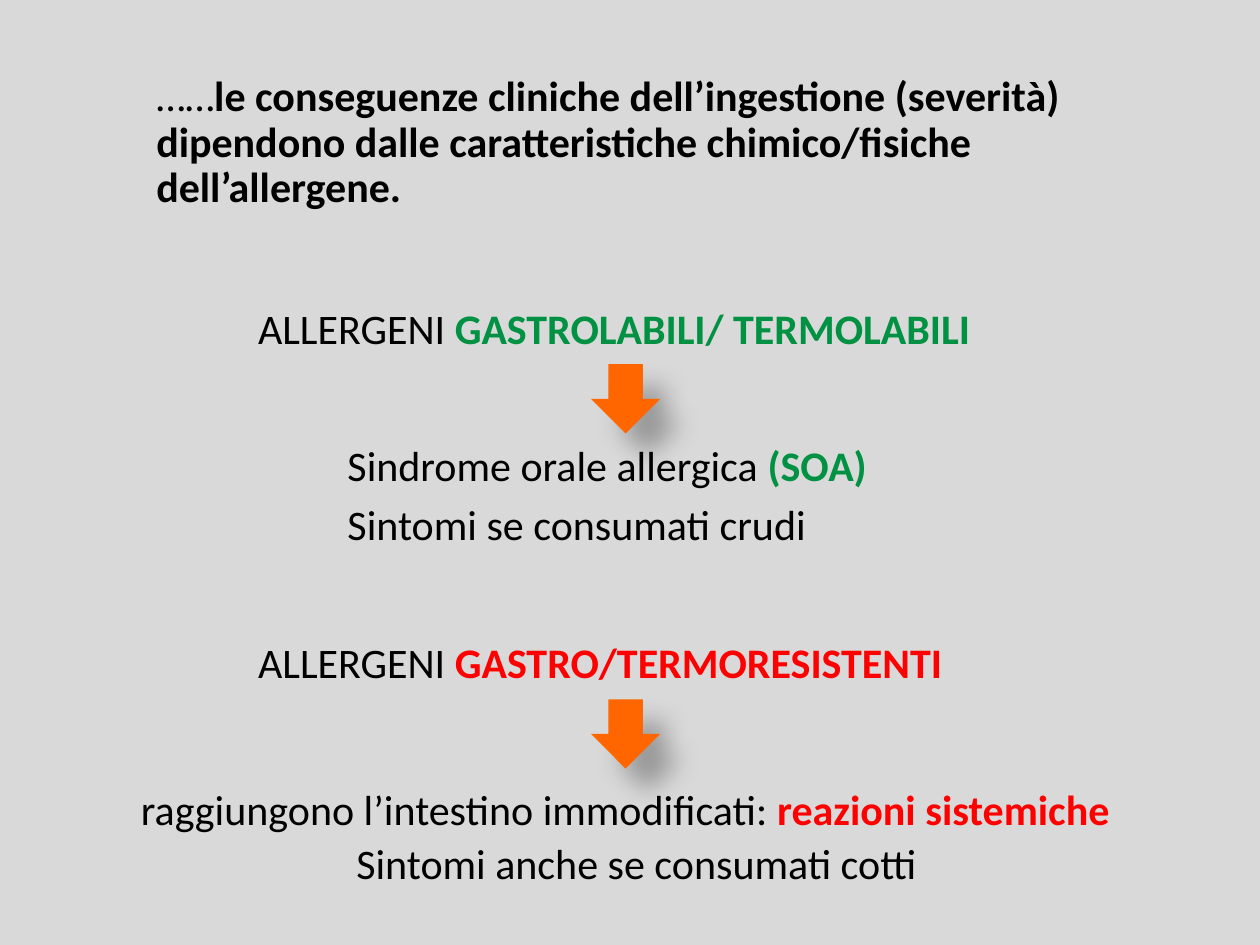
from pptx import Presentation
from pptx import util as u
from pptx.dml.color import RGBColor
from pptx.enum import shapes, text
from pptx.oxml import parse_xml
from pptx.oxml.ns import nsdecls

BLACK = RGBColor(0x00, 0x00, 0x00)
GREEN = RGBColor(0x00, 0x92, 0x42)
RED = RGBColor(0xFF, 0x00, 0x00)
ORANGE = RGBColor(0xFF, 0x66, 0x00)
GREY = RGBColor(0xD9, 0xD9, 0xD9)

SHADOW = (
    f'<a:effectLst {nsdecls("a")}>'
    f'<a:outerShdw blurRad="{u.Pt(15)}" dist="{u.Pt(18)}" dir="2700000" algn="tl" rotWithShape="0">'
    '<a:srgbClr val="000000"><a:alpha val="30000"/></a:srgbClr>'
    '</a:outerShdw></a:effectLst>'
)


class AllergenSlide:
    font = "Calibri"
    size = u.Pt(24)

    def __init__(self, deck):
        self.page = deck.slides.add_slide(deck.slide_layouts[5])
        fill = self.page.background.fill
        fill.solid()
        fill.fore_color.rgb = GREY

    def add_spans(self, box, spans):
        frame = box.text_frame
        frame.word_wrap = True
        frame.auto_size = text.MSO_AUTO_SIZE.NONE
        frame.vertical_anchor = text.MSO_ANCHOR.TOP
        para = frame.paragraphs[0]
        para.alignment = text.PP_ALIGN.LEFT
        for words, color, bold in spans:
            span = para.add_run()
            span.text = words
            span.font.name = self.font
            span.font.size = self.size
            span.font.bold = bold
            span.font.color.rgb = color
        return para

    def title(self, left, top, width, height, spans):
        box = self.page.shapes.title
        box.left, box.top = u.Inches(left), u.Inches(top)
        box.width, box.height = u.Inches(width), u.Inches(height)
        self.add_spans(box, spans).line_spacing = 0.9

    def line(self, left, top, width, plain, strong="", color=BLACK):
        box = self.page.shapes.add_textbox(
            u.Inches(left), u.Inches(top), u.Inches(width), u.Inches(0.5))
        spans = [(plain, BLACK, False)]
        if strong:
            spans.append((strong, color, True))
        self.add_spans(box, spans)

    def arrow(self, left, top, side):
        arrow = self.page.shapes.add_shape(
            shapes.MSO_SHAPE.DOWN_ARROW,
            u.Inches(left), u.Inches(top), u.Inches(side), u.Inches(side))
        arrow.fill.solid()
        arrow.fill.fore_color.rgb = ORANGE
        arrow.line.fill.background()
        arrow._element.spPr.append(parse_xml(SHADOW))


def main():
    deck = Presentation()
    deck.slide_width, deck.slide_height = u.Inches(10), u.Inches(7.5)
    slide = AllergenSlide(deck)

    slide.title(1.14, 0.55, 8.22, 1.19, [
        ("……", BLACK, False),
        ("le conseguenze cliniche dell’ingestione (severità) dipendono dalle "
         "caratteristiche chimico/fisiche dell’allergene.", BLACK, True),
    ])

    slide.line(1.95, 2.35, 6.56, "ALLERGENI ", "GASTROLABILI/ TERMOLABILI", GREEN)
    slide.arrow(4.69, 2.89, 0.55)
    slide.line(2.66, 3.44, 4.77, "Sindrome orale allergica ", "(SOA)", GREEN)
    slide.line(2.66, 3.91, 4.77, "Sintomi se consumati crudi")

    slide.line(1.95, 5, 6.02, "ALLERGENI ", "GASTRO/TERMORESISTENTI", RED)
    slide.arrow(4.69, 5.55, 0.55)
    slide.line(1.02, 6.17, 8.28, "raggiungono l’intestino immodificati: ", "reazioni sistemiche", RED)
    slide.line(2.73, 6.6, 4.77, "Sintomi anche se consumati cotti")

    deck.save("out.pptx")


if __name__ == "__main__":
    main()
